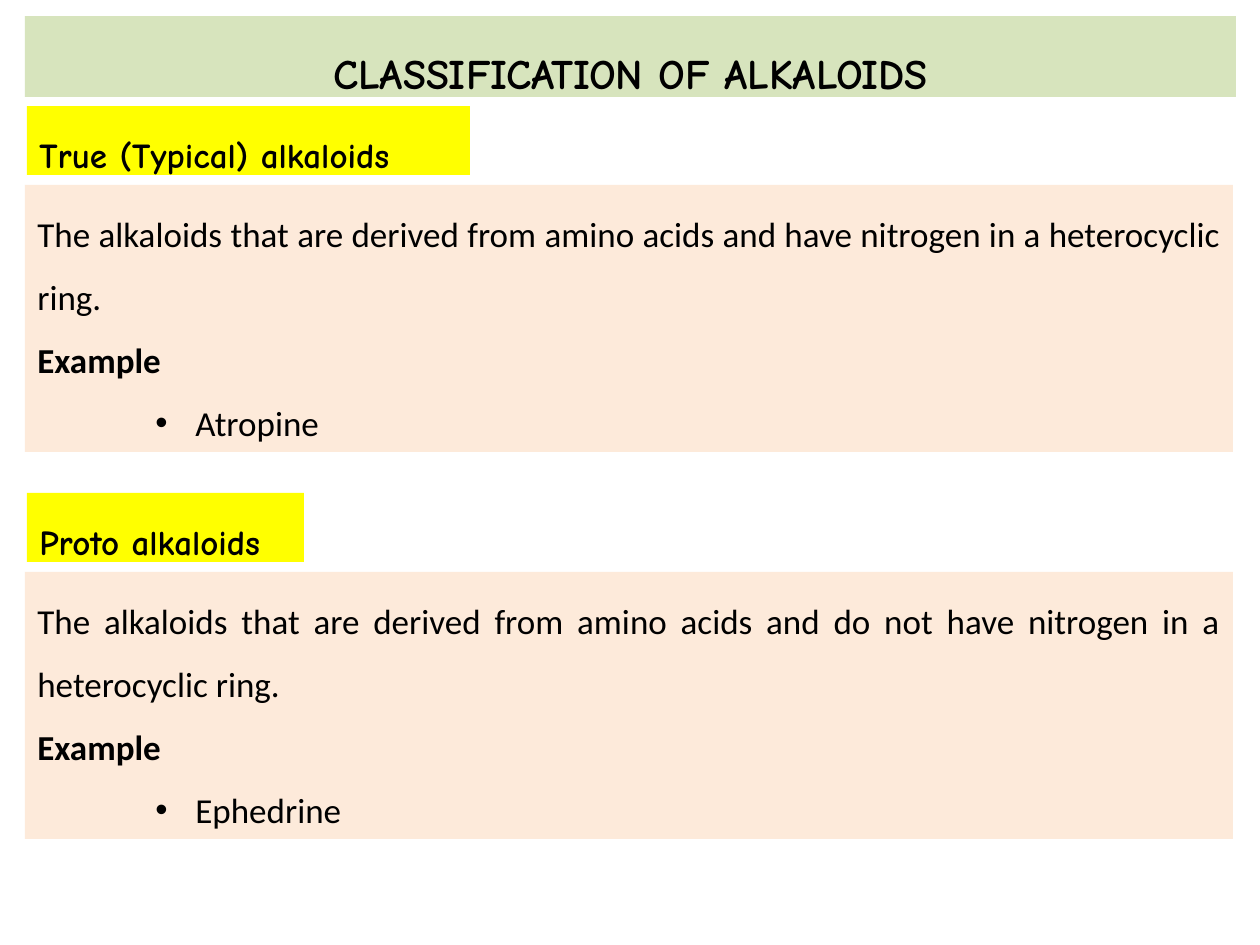
from lxml.etree import SubElement
from pptx import Presentation
from pptx.dml.color import RGBColor
from pptx.enum.shapes import MSO_SHAPE as SHAPE
from pptx.enum.text import MSO_ANCHOR, MSO_AUTO_SIZE as FIT, PP_ALIGN as ALIGN
from pptx.oxml.ns import qn
from pptx.util import Pt

# Content
TITLE = "CLASSIFICATION OF ALKALOIDS"
SECTIONS = [  # heading, heading width, definition, example
    ("True (Typical) alkaloids", 443,
     "The alkaloids that are derived from amino acids and have nitrogen "
     "in a heterocyclic ring.", "Atropine"),
    ("Proto alkaloids", 277,
     "The alkaloids that are derived from amino acids and do not have nitrogen "
     "in a heterocyclic ring.", "Ephedrine"),
]

# Style
BLACK = RGBColor(0x00, 0x00, 0x00)
GREEN = RGBColor(0xD7, 0xE4, 0xBD)
YELLOW = RGBColor(0xFF, 0xFF, 0x00)
PEACH = RGBColor(0xFD, 0xEA, 0xDA)
HEAD_FONT, BODY_FONT = "Comic Neue", "Calibri"

# Layout in px
SECTION_TOP, SECTION_STEP, BODY_OFFSET = 106, 387, 79
BULLET_LEFT, BULLET_HANG = 158, 40


def px(n):
    return round(n * 914400 / 126)


def add_box(slide, x, y, w, h, fill, wrap=True):
    sp = slide.shapes.add_shape(SHAPE.RECTANGLE, px(x), px(y), px(w), px(h))
    sp.shadow.inherit = False
    sp.fill.solid()
    sp.fill.fore_color.rgb = fill
    sp.line.fill.background()
    tf = sp.text_frame
    tf.word_wrap = wrap
    tf.auto_size = FIT.SHAPE_TO_FIT_TEXT
    tf.vertical_anchor = MSO_ANCHOR.TOP
    return tf


def add_text(tf, text, size=20, font=BODY_FONT, bold=False,
             align=ALIGN.JUSTIFY, bullet=False):
    p = tf.add_paragraph() if tf.text else tf.paragraphs[0]
    p.alignment = align
    p.line_spacing = 1.5
    if bullet:
        pPr = p._p.get_or_add_pPr()
        pPr.set("marL", str(px(BULLET_LEFT)))
        pPr.set("indent", str(-px(BULLET_HANG)))
        SubElement(pPr, qn("a:buFont")).set("typeface", "Arial")
        SubElement(pPr, qn("a:buChar")).set("char", "•")
    r = p.add_run()
    r.text = text
    r.font.size = Pt(size)
    r.font.name = font
    r.font.bold = bold
    r.font.color.rgb = BLACK


prs = Presentation()
prs.slide_width, prs.slide_height = px(1260), px(945)
slide = prs.slides.add_slide(prs.slide_layouts[6])

# Title band
tf = add_box(slide, 25, 16, 1211, 81, GREEN)
add_text(tf, TITLE, size=24, font=HEAD_FONT, bold=True, align=ALIGN.CENTER)

# Sections: heading tag above a definition panel
for i, (heading, width, definition, example) in enumerate(SECTIONS):
    top = SECTION_TOP + i * SECTION_STEP
    tf = add_box(slide, 27, top, width, 69, YELLOW, wrap=False)
    add_text(tf, heading, font=HEAD_FONT, bold=True, align=ALIGN.LEFT)

    tf = add_box(slide, 25, top + BODY_OFFSET, 1208, 267, PEACH)
    add_text(tf, definition)
    add_text(tf, "Example", bold=True)
    add_text(tf, example, bullet=True)

prs.save("out.pptx")
